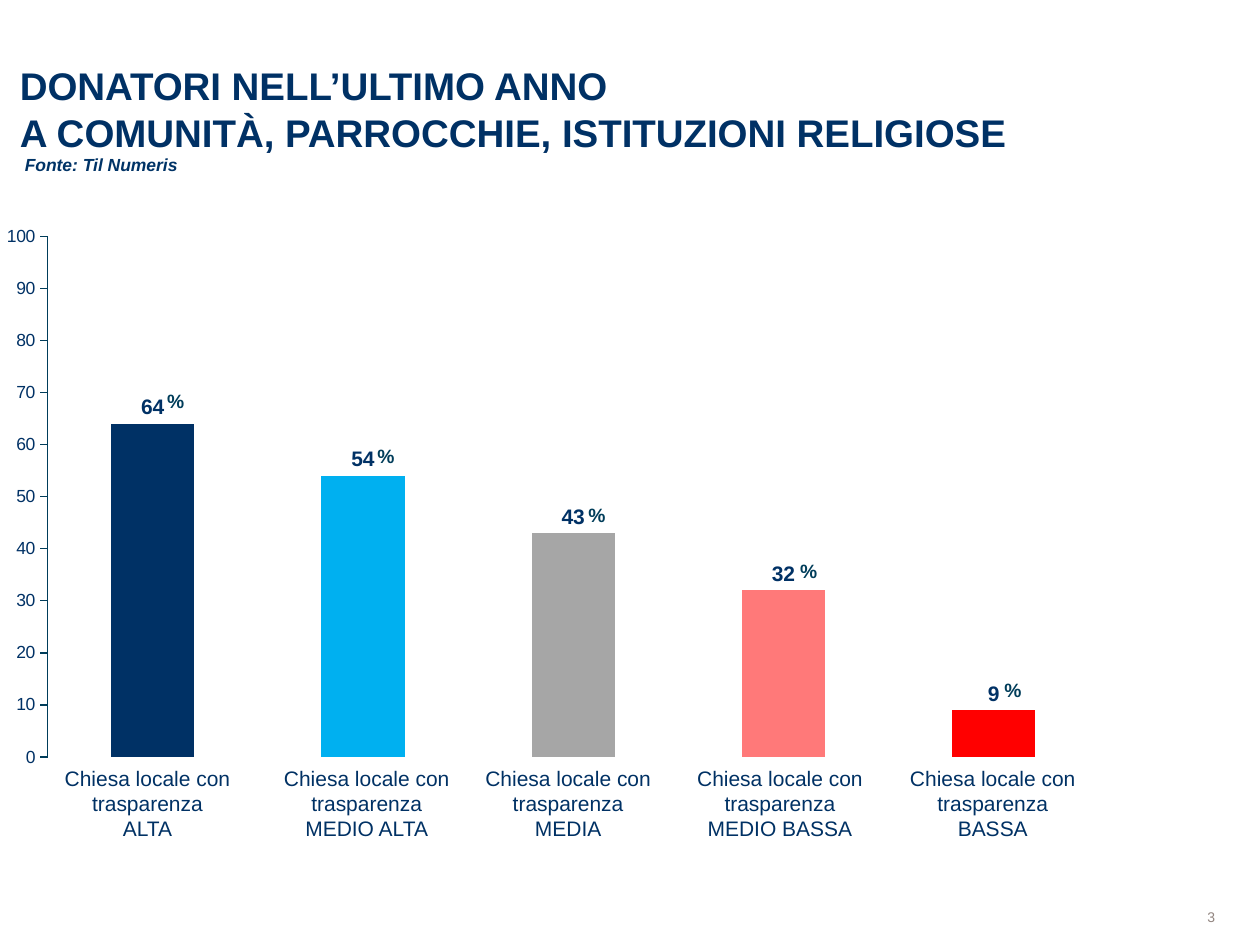
"""Build a slide with a column chart of donors by transparency of the local church."""
from dataclasses import dataclass

from lxml.etree import SubElement
from pptx import Presentation
from pptx.chart.data import CategoryChartData
from pptx.dml.color import RGBColor
from pptx.enum.chart import XL_CHART_TYPE as ChartType
from pptx.enum.chart import XL_LABEL_POSITION as LabelPosition
from pptx.enum.chart import XL_TICK_LABEL_POSITION as TickLabels
from pptx.enum.chart import XL_TICK_MARK as TickMark
from pptx.enum.shapes import MSO_SHAPE as ShapeType
from pptx.enum.text import MSO_ANCHOR as Anchor
from pptx.enum.text import PP_ALIGN as Align
from pptx.oxml.ns import qn
from pptx.util import Cm, Pt

FONT = "Arial"
NAVY = "003165"
TEAL = "003D5A"


@dataclass
class Box:
    left: float
    top: float
    width: float
    height: float

    def lengths(self) -> tuple[Cm, Cm, Cm, Cm]:
        return Cm(self.left), Cm(self.top), Cm(self.width), Cm(self.height)


@dataclass
class Style:
    size: float
    color: str = NAVY
    bold: bool = False
    italic: bool = False
    align: Align = Align.LEFT
    anchor: Anchor = Anchor.TOP
    spacing: float = 1.0
    wrap: bool = True
    margins: tuple[float, float] = (0, 0)


@dataclass
class Column:
    level: str
    value: int
    color: str
    label_left: float
    percent_left: float
    percent_top: float


COLUMNS = [
    Column("ALTA", 64, NAVY, 0.13, 3.14, 7.78),
    Column("MEDIO ALTA", 54, "00B0F0", 4.55, 7.38, 8.9),
    Column("MEDIA", 43, "A6A6A6", 8.61, 11.63, 10.07),
    Column("MEDIO BASSA", 32, "FF7979", 12.88, 15.9, 11.21),
    Column("BASSA", 9, "FF0000", 17.17, 20.02, 13.6),
]
TITLE = Style(22, bold=True, anchor=Anchor.BOTTOM)
SOURCE = Style(10, "003366", bold=True, italic=True)
PERCENT = Style(11, TEAL, bold=True, align=Align.CENTER, spacing=0.95,
                wrap=False, margins=(0.23, 0.1))
LABEL = Style(12, "003164", align=Align.CENTER, margins=(0.23, 0.1))
NUMBER = Style(8, "928580", align=Align.RIGHT, anchor=Anchor.MIDDLE)


def rgb(color: str) -> RGBColor:
    return RGBColor.from_string(color)


def set_font(font, size: float, color: str, bold: bool = False) -> None:
    font.name, font.size, font.bold = FONT, Pt(size), bold
    font.color.rgb = rgb(color)


def fill_text(shape, paragraphs: list[str], style: Style) -> None:
    frame = shape.text_frame
    frame.word_wrap = style.wrap
    frame.vertical_anchor = style.anchor
    frame.margin_left = frame.margin_right = Cm(style.margins[0])
    frame.margin_top = frame.margin_bottom = Cm(style.margins[1])
    for index, text in enumerate(paragraphs):
        paragraph = frame.add_paragraph() if index else frame.paragraphs[0]
        paragraph.alignment = style.align
        paragraph.line_spacing = style.spacing
        for number, line in enumerate(text.split("\n")):
            if number:
                paragraph.add_line_break()
            run = paragraph.add_run()
            run.text = line
            set_font(run.font, style.size, style.color, style.bold)
            run.font.italic = style.italic


def add_text(slide, box: Box, paragraphs: list[str], style: Style) -> None:
    fill_text(slide.shapes.add_textbox(*box.lengths()), paragraphs, style)


def add_page_number(slide, box: Box, number: str) -> None:
    shape = slide.shapes.add_shape(ShapeType.RECTANGLE, *box.lengths())
    shape.shadow.inherit = False
    shape.fill.solid()
    shape.fill.fore_color.rgb = rgb("FFFFFF")
    shape.line.fill.background()
    fill_text(shape, [number], NUMBER)


def set_plot_layout(chart, box: Box) -> None:
    plot_area = chart.plots[0]._element.getparent()
    layout = plot_area.find(qn("c:layout"))
    if layout is None:
        layout = SubElement(plot_area, qn("c:layout"))
        plot_area.insert(0, layout)
    manual = SubElement(layout, qn("c:manualLayout"))
    settings = [("layoutTarget", "inner"), ("xMode", "edge"), ("yMode", "edge"),
                ("x", box.left), ("y", box.top), ("w", box.width), ("h", box.height)]
    for tag, value in settings:
        SubElement(manual, qn(f"c:{tag}")).set("val", str(value))


def add_column_chart(slide, box: Box, columns: list[Column]) -> None:
    data = CategoryChartData()
    data.categories = [str(number) for number in range(1, len(columns) + 1)]
    data.add_series("Series 1", [column.value for column in columns])
    chart = slide.shapes.add_chart(ChartType.COLUMN_CLUSTERED, *box.lengths(), data).chart
    chart.has_legend = chart.has_title = False
    set_font(chart.font, 12, NAVY)
    set_plot_layout(chart, Box(0.158, 0.034, 0.797, 0.931))

    chart.category_axis.visible = False
    axis = chart.value_axis
    axis.minimum_scale, axis.maximum_scale, axis.major_unit = 0, 100, 10
    axis.has_major_gridlines = False
    axis.major_tick_mark, axis.minor_tick_mark = TickMark.OUTSIDE, TickMark.NONE
    axis.tick_label_position = TickLabels.NEXT_TO_AXIS
    axis.format.line.color.rgb = rgb(TEAL)
    axis.format.line.width = Pt(0.75)
    set_font(axis.tick_labels.font, 10, NAVY)

    plot = chart.plots[0]
    plot.gap_width, plot.overlap, plot.vary_by_categories = 153, 46, False
    series = plot.series[0]
    series.format.fill.solid()
    series.format.fill.fore_color.rgb = rgb("005B88")
    labels = series.data_labels
    labels.show_value = True
    labels.position = LabelPosition.OUTSIDE_END
    set_font(labels.font, 12, NAVY, bold=True)
    for index, column in enumerate(columns):
        fill = series.points[index].format.fill
        fill.solid()
        fill.fore_color.rgb = rgb(column.color)


def main() -> None:
    presentation = Presentation()
    presentation.slide_width, presentation.slide_height = Cm(25.4), Cm(19.05)
    slide = presentation.slides.add_slide(presentation.slide_layouts[6])

    add_page_number(slide, Box(21.1, 18.34, 3.4, 0.3), "3")
    add_text(slide, Box(0.5, 3.1, 8.69, 0.43), ["Fonte: Til Numeris"], SOURCE)
    add_column_chart(slide, Box(-3.24, 4.38, 26.59, 11.28), COLUMNS)
    title = "DONATORI NELL’ULTIMO ANNO\nA COMUNITÀ, PARROCCHIE, ISTITUZIONI RELIGIOSE"
    add_text(slide, Box(0.4, 1.24, 25.88, 1.88), [title], TITLE)
    for column in COLUMNS:
        add_text(slide, Box(column.percent_left, column.percent_top, 0.76, 0.69), ["%"], PERCENT)
        add_text(slide, Box(column.label_left, 15.33, 5.69, 1.75),
                 ["Chiesa locale con trasparenza", column.level], LABEL)
    presentation.save("out.pptx")


if __name__ == "__main__":
    main()
